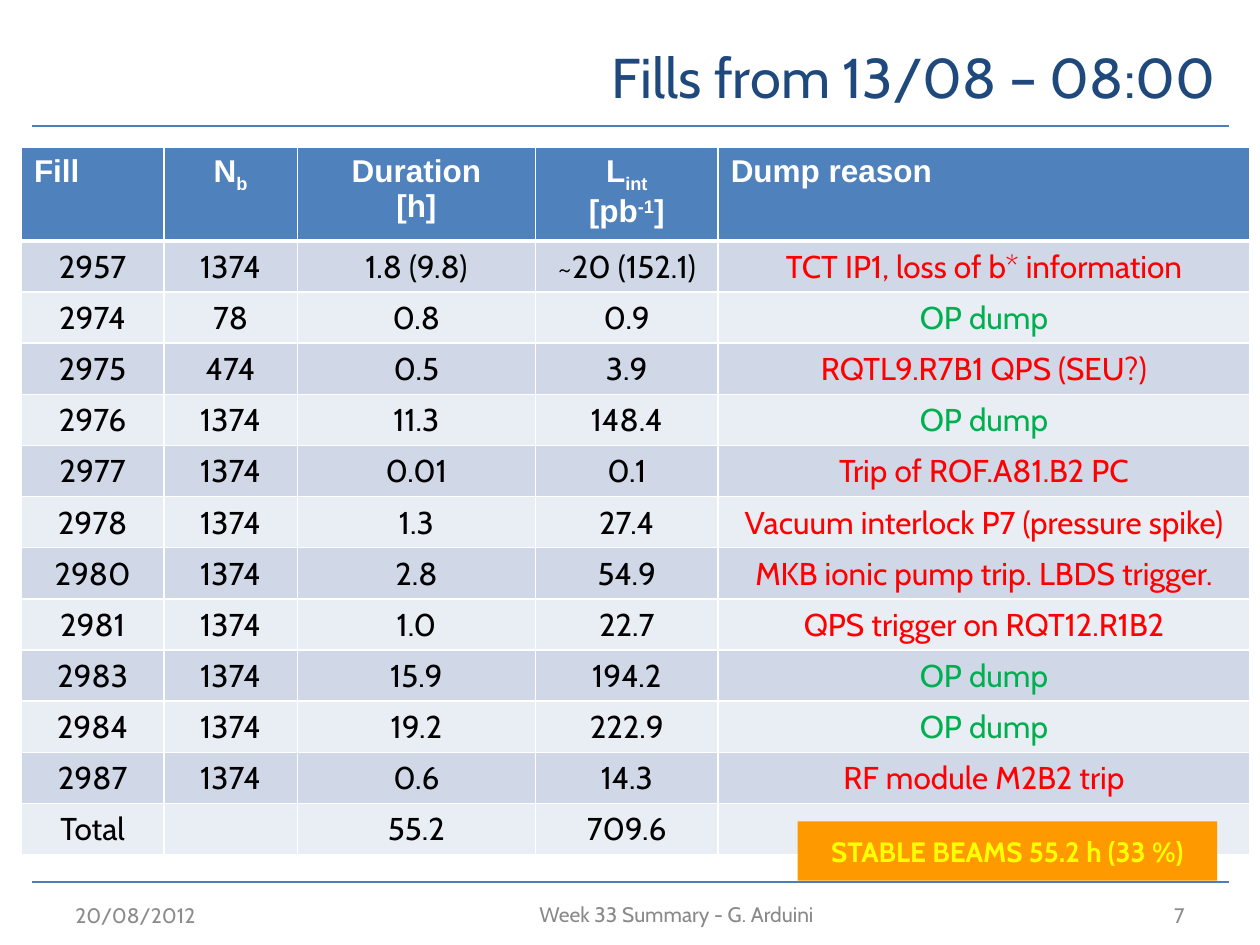
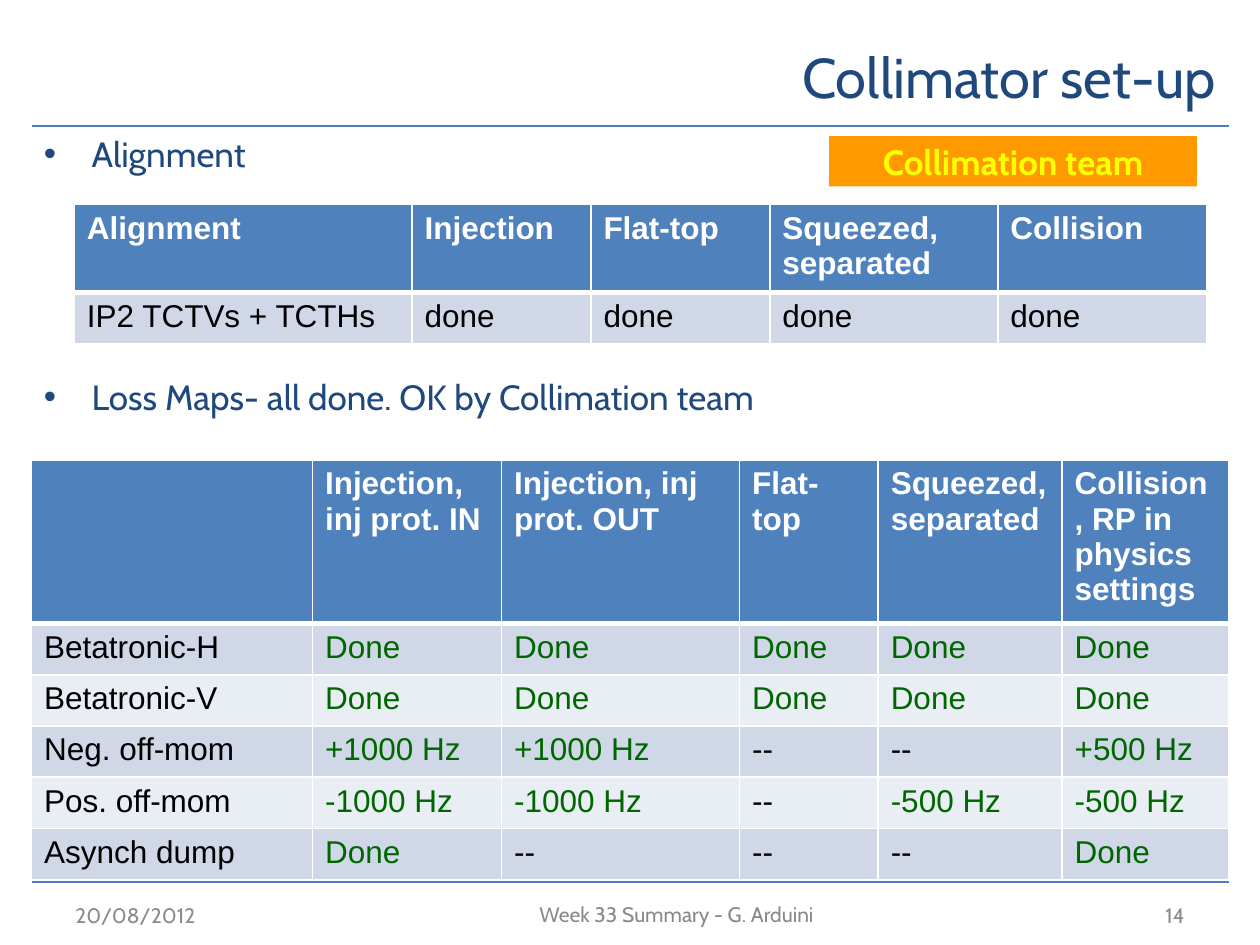
from pptx import Presentation, util as u
from pptx.dml.color import RGBColor
from pptx.enum import shapes, text
from pptx.oxml.ns import qn
from lxml import etree

COLORS = {
    "title": "1F497D", "rule": "4B7EBC", "date": "8C8C8C", "event": "898989",
    "header": "4F81BD", "odd": "D0D8E8", "even": "E9EDF4", "border": "FFFFFF",
    "white": "FFFFFF", "black": "000000", "fault": "FF0000", "planned": "00B050",
    "done": "006600", "tag": "FF9900", "tag_text": "FFFF00",
}
BODY_FONT, TABLE_FONT = "Cabin", "Arial"
LEFT, CENTER, RIGHT = text.PP_ALIGN.LEFT, text.PP_ALIGN.CENTER, text.PP_ALIGN.RIGHT
MIDDLE = text.MSO_ANCHOR.MIDDLE
ROW_HEIGHT = 0.406

FILL_HEADERS = [
    "Fill",
    [[("N", 0), ("b", -25)]],
    [[("Duration", 0)], [("[h]", 0)]],
    [[("L", 0), ("int", -25)], [("[pb", 0), ("-1", 30), ("]", 0)]],
    "Dump reason",
]
FILLS = [
    ["2957", "1374", "1.8 (9.8)", "~20 (152.1)", "TCT IP1, loss of b* information"],
    ["2974", "78", "0.8", "0.9", "OP dump"],
    ["2975", "474", "0.5", "3.9", "RQTL9.R7B1 QPS (SEU?)"],
    ["2976", "1374", "11.3", "148.4", "OP dump"],
    ["2977", "1374", "0.01", "0.1", "Trip of ROF.A81.B2 PC"],
    ["2978", "1374", "1.3", "27.4", "Vacuum interlock P7 (pressure spike)"],
    ["2980", "1374", "2.8", "54.9", "MKB ionic pump trip. LBDS trigger."],
    ["2981", "1374", "1.0", "22.7", "QPS trigger on RQT12.R1B2"],
    ["2983", "1374", "15.9", "194.2", "OP dump"],
    ["2984", "1374", "19.2", "222.9", "OP dump"],
    ["2987", "1374", "0.6", "14.3", "RF module M2B2 trip"],
    ["Total", "", "55.2", "709.6", ""],
]
ALIGNMENT = [
    ["Alignment", "Injection", "Flat-top", "Squeezed, separated", "Collision"],
    ["IP2 TCTVs + TCTHs"] + ["done"] * 4,
]
LOSS_MAPS = [
    ["", "Injection, inj prot. IN", "Injection, inj prot. OUT", "Flat-top",
     "Squeezed, separated", "Collision, RP in physics settings"],
    ["Betatronic-H"] + ["Done"] * 5,
    ["Betatronic-V"] + ["Done"] * 5,
    ["Neg. off-mom", "+1000 Hz", "+1000 Hz", "--", "--", "+500 Hz"],
    ["Pos. off-mom", "-1000 Hz", "-1000 Hz", "--", "-500 Hz", "-500 Hz"],
    ["Asynch dump", "Done", "--", "--", "--", "Done"],
]


def rgb(name):
    return RGBColor.from_string(COLORS[name])


def inches(box):
    return [u.Inches(length) for length in box]


def add_run(paragraph, words, size, color, font=BODY_FONT, bold=False, baseline=0):
    run = paragraph.add_run()
    run.text = words
    run.font.size, run.font.name, run.font.bold = u.Pt(size), font, bold
    run.font.color.rgb = rgb(color)
    if baseline:
        run._r.get_or_add_rPr().set("baseline", str(baseline * 1000))


def add_label(slide, box, words, size, color, align):
    frame = slide.shapes.add_textbox(*inches(box)).text_frame
    frame.word_wrap = True
    frame.vertical_anchor = MIDDLE
    frame.paragraphs[0].alignment = align
    add_run(frame.paragraphs[0], words, size, color)


def add_tag(slide, box, words, size):
    tag = slide.shapes.add_shape(shapes.MSO_SHAPE.RECTANGLE, *inches(box))
    tag.shadow.inherit = False
    tag.fill.solid()
    tag.fill.fore_color.rgb = rgb("tag")
    tag.line.fill.background()
    tag.text_frame.word_wrap = True
    tag.text_frame.vertical_anchor = MIDDLE
    tag.text_frame.paragraphs[0].alignment = CENTER
    add_run(tag.text_frame.paragraphs[0], words, size, "tag_text", bold=True)


def add_rule(slide, y):
    rule = slide.shapes.add_connector(shapes.MSO_CONNECTOR.STRAIGHT,
                                      *inches((0.25, y, 9.75, y)))
    rule.line.color.rgb = rgb("rule")
    rule.line.width = u.Pt(1.5)
    etree.SubElement(rule._element.spPr, qn("a:effectLst"))


def new_slide(deck, title, number):
    """Add a blank slide with the shared rules, title and footer."""
    slide = deck.slides.add_slide(deck.slide_layouts[6])
    for y in (1, 7):
        add_rule(slide, y)
    add_label(slide, (1.75, 0.17, 8, 0.87), title, 32, "title", RIGHT)
    add_label(slide, (0.5, 7.17, 2.33, 0.18), "20/08/2012", 12, "date", LEFT)
    add_label(slide, (1.83, 7.17, 7.08, 0.17), "Week 33 Summary - G. Arduini",
              12, "event", CENTER)
    add_label(slide, (7.17, 7.17, 2.33, 0.18), str(number), 12, "date", RIGHT)
    return slide


def style_cell(cell, row):
    """Set borders and fill by row; the line under the header is thicker."""
    widths = {"L": 1, "R": 1, "T": 3 if row == 1 else 1, "B": 3 if row == 0 else 1}
    properties = cell._tc.get_or_add_tcPr()
    for side, width in widths.items():
        line = etree.SubElement(properties, qn(f"a:ln{side}"), w=str(u.Pt(width)))
        solid = etree.SubElement(line, qn("a:solidFill"))
        etree.SubElement(solid, qn("a:srgbClr"), val=COLORS["border"])
    cell.fill.solid()
    band = "header" if row == 0 else "odd" if row % 2 else "even"
    cell.fill.fore_color.rgb = rgb(band)


def write_cell(cell, content, color, font, bold, align):
    """Write plain text, or paragraphs made of (text, baseline percent) pairs."""
    if not content:
        return
    lines = [[(content, 0)]] if isinstance(content, str) else content
    for i, line in enumerate(lines):
        frame = cell.text_frame
        paragraph = frame.add_paragraph() if i else frame.paragraphs[0]
        paragraph.alignment = align
        for words, baseline in line:
            add_run(paragraph, words, 18, color, font, bold, baseline)


def add_grid(slide, origin, widths, header_height, rows, body_color, centered=False):
    """Add a banded table; body_color(column, content) names a cell's text colour."""
    heights = [header_height] + [ROW_HEIGHT] * (len(rows) - 1)
    box = (*origin, sum(widths), sum(heights))
    table = slide.shapes.add_table(len(rows), len(widths), *inches(box)).table
    table.first_row = table.horz_banding = False
    for column, width in zip(table.columns, widths):
        column.width = u.Inches(width)
    for r, (contents, height) in enumerate(zip(rows, heights)):
        table.rows[r].height = u.Inches(height)
        for c, content in enumerate(contents):
            cell = table.cell(r, c)
            style_cell(cell, r)
            if r == 0:
                align = CENTER if centered and 0 < c < len(widths) - 1 else LEFT
                write_cell(cell, content, "white", TABLE_FONT, True, align)
                continue
            if centered:
                cell.vertical_anchor = MIDDLE
                cell.margin_left = cell.margin_right = cell.margin_top = u.Inches(0.01)
                cell.margin_bottom = 0
            write_cell(cell, content, body_color(c, content),
                       BODY_FONT if centered else TABLE_FONT, False,
                       CENTER if centered else LEFT)


def add_topics(slide, box, topics, gap):
    """Add bulleted topics with a gap in points for the table between them."""
    frame = slide.shapes.add_textbox(*inches(box)).text_frame
    frame.word_wrap = True
    for i, topic in enumerate(topics):
        paragraph = frame.add_paragraph() if i else frame.paragraphs[0]
        if i:
            paragraph.space_before = u.Pt(gap)
        properties = paragraph._p.get_or_add_pPr()
        indent = u.Inches(0.38)
        properties.set("marL", str(indent))
        properties.set("indent", str(-indent))
        etree.SubElement(properties, qn("a:buFont"), typeface="Arial")
        etree.SubElement(properties, qn("a:buChar"), char="•")
        add_run(paragraph, topic, 20, "title")


def reason_color(column, content):
    if column < 4:
        return "black"
    return "planned" if content == "OP dump" else "fault"


def loss_map_color(column, content):
    return "black" if column == 0 or content == "--" else "done"


def build_fills(deck):
    slide = new_slide(deck, "Fills from 13/08 – 08:00", 7)
    add_grid(slide, (0.17, 1.17), [1.13, 1.06, 1.89, 1.45, 4.22], 0.69,
             [FILL_HEADERS] + FILLS, reason_color, centered=True)
    add_tag(slide, (6.33, 6.52, 3.33, 0.47), "STABLE BEAMS 55.2 h (33 %)", 16)


def build_collimators(deck):
    slide = new_slide(deck, "Collimator set-up", 14)
    add_grid(slide, (0.25, 3.65), [2.23, 1.5, 1.89, 1.1, 1.46, 1.32], 1.2,
             LOSS_MAPS, loss_map_color)
    add_topics(slide, (0.25, 1, 9.5, 2.4),
               ["Alignment", "Loss Maps- all done. OK by Collimation team"], 115)
    add_grid(slide, (0.59, 1.62), [2.68, 1.42, 1.42, 1.81, 1.66], 0.65,
             ALIGNMENT, lambda column, content: "black")
    add_tag(slide, (6.58, 1.08, 2.92, 0.4), "Collimation team", 20)


def main():
    deck = Presentation()
    deck.slide_width, deck.slide_height = inches((10, 7.5))
    build_fills(deck)
    build_collimators(deck)
    deck.save("out.pptx")


if __name__ == "__main__":
    main()
